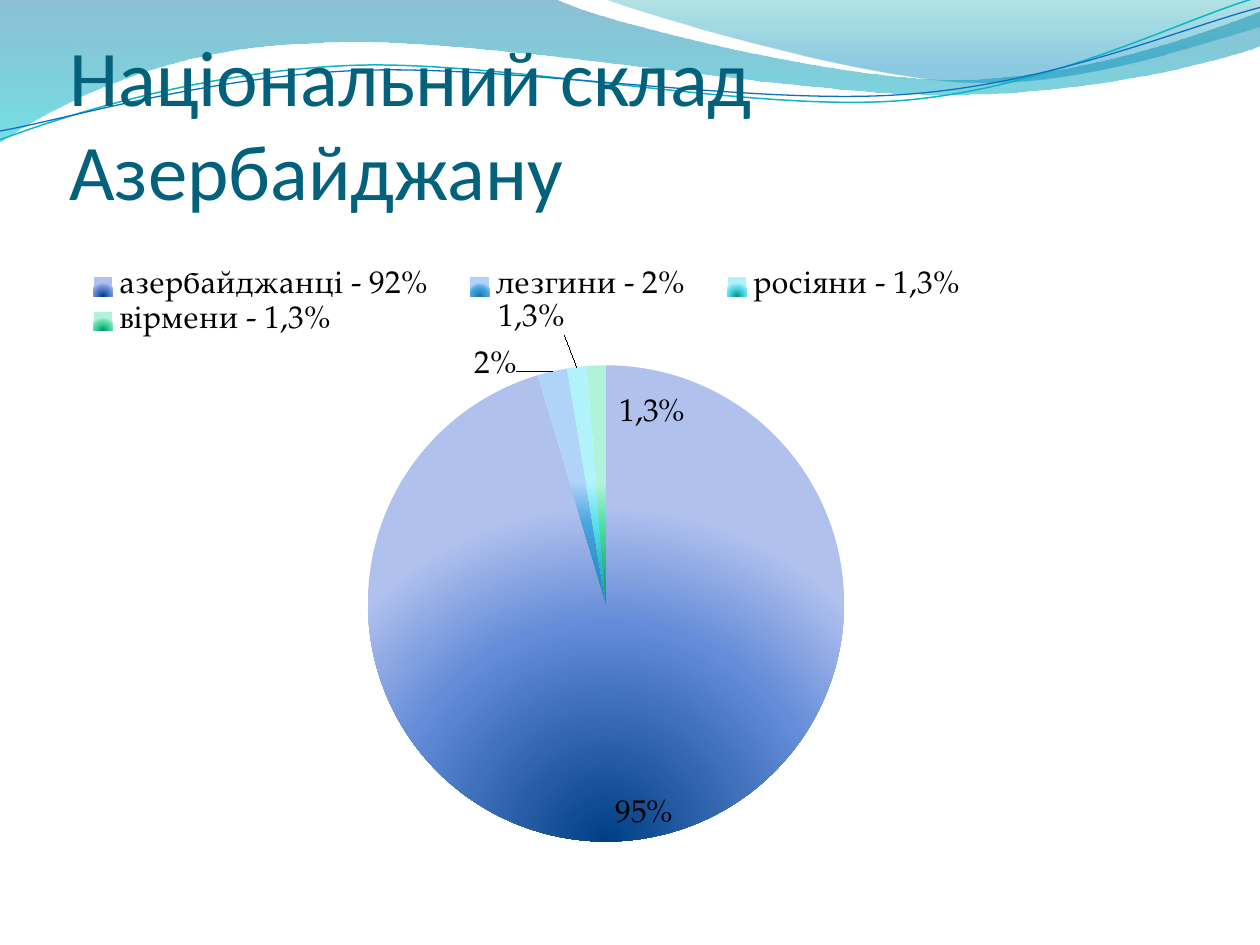
from math import cos, radians, sin

from lxml import etree
from pptx import Presentation
from pptx.chart.data import CategoryChartData
from pptx.dml.color import RGBColor
from pptx.enum.chart import XL_CHART_TYPE, XL_LABEL_POSITION, XL_LEGEND_POSITION
from pptx.enum.text import MSO_ANCHOR, PP_ALIGN
from pptx.oxml import parse_xml
from pptx.oxml.ns import nsdecls, qn
from pptx.util import Inches, Pt

PIE = XL_CHART_TYPE.PIE
INSIDE_END = XL_LABEL_POSITION.INSIDE_END
OUTSIDE_END = XL_LABEL_POSITION.OUTSIDE_END
LEGEND_TOP = XL_LEGEND_POSITION.TOP
BOTTOM = MSO_ANCHOR.BOTTOM
LEFT = PP_ALIGN.LEFT

TITLE = "Національний склад Азербайджану"
CHART_FONT = "TeX Gyre Pagella"
# name, value, gradient from the focus outwards
GROUPS = [
    ("азербайджанці - 92%", 95, ("003F85", "648CD8", "B1C1EE")),
    ("лезгини - 2%", 2, ("1B75AD", "45A5E0", "B0D4F9")),
    ("росіяни - 1,3%", 1.3, ("0A8F96", "55DFE8", "B0F3FA")),
    ("вірмени - 1,3%", 1.3, ("0B8F66", "4FDCA5", "B0F3DA")),
]
# own text, position, shift as a share of the chart; one for each slice
LABELS = [
    (None, INSIDE_END, 0.03, 0),
    (None, OUTSIDE_END, -0.03, 0.03),
    ("1,3%", OUTSIDE_END, -0.01, -0.04),
    ("1,3%", OUTSIDE_END, 0.05, 0.12),
]
# Each outline is a list of points (2 numbers) and cubic curves (6 numbers)
BANDS = [
    ([(0, 0), (4.4, -0.01), (4.76, 0.17, 6.64, 0.63, 7.58, 0.63),
      (8.53, 0.63, 9.58, 0.26, 10, 0.09), (10.01, 0.36),
      (9.83, 0.44, 8.7, 0.76, 7.46, 0.75), (6.22, 0.75, 3.82, 0.28, 2.57, 0.34),
      (1.29, 0.36, 0.46, 0.83, -0.01, 1.13)],
     [(0, "0074A1", 45), (100, "00C6CF", 55)]),
    ([(4.79, -0.01), (5.09, 0.11, 6.82, 0.62, 7.69, 0.65),
      (8.56, 0.69, 9.61, 0.32, 10, 0.21), (10, 0)],
     [(0, "00A1A9", 30), (80, "008BBF", 45)]),
]
# outline, colour, width, centre of rotation
WAVES = [
    ([(0, 1.11), (0.48, 0.93, 1.58, 0.57, 2.77, 0.52),
      (3.95, 0.47, 5.93, 0.89, 7.13, 0.8), (8.33, 0.71, 9.38, 0.15, 9.98, -0.02)],
     "0AB8BF", 0.85, (4.99, 0.57)),
    ([(0, 1.04), (0.47, 0.96, 1.64, 0.61, 2.83, 0.56),
      (4.03, 0.51, 5.97, 0.84, 7.17, 0.75), (8.36, 0.67, 9.41, 0.21, 10, 0.06)],
     "0F6FC6", 0.75, (5, 0.59)),
]
WAVE_TILT = 2.7
LINEAR_DOWN = '<a:lin ang="5400000" scaled="0"/>'
RADIAL_FROM_BOTTOM = ('<a:path path="circle"><a:fillToRect l="50000" t="100000" '
                      'r="50000" b="0"/></a:path>')


def color(hex_code):
    return RGBColor.from_string(hex_code)


def set_gradient(fill, properties, stops, direction):
    """Fill with (position %, colour, opacity %) stops."""
    fill.background()
    stop_xml = "".join(
        f'<a:gs pos="{position * 1000}"><a:srgbClr val="{hex_code}">'
        f'<a:alpha val="{opacity * 1000}"/></a:srgbClr></a:gs>'
        for position, hex_code, opacity in stops)
    gradient = parse_xml(f'<a:gradFill {nsdecls("a")} rotWithShape="1">'
                         f'<a:gsLst>{stop_xml}</a:gsLst>{direction}</a:gradFill>')
    properties.replace(properties.find(qn("a:noFill")), gradient)


def pairs(segment):
    return list(zip(segment[::2], segment[1::2]))


def turn(segment, center, degrees):
    """Rotate every point of a segment about the centre."""
    cosine, sine = cos(radians(degrees)), sin(radians(degrees))
    turned = []
    for x, y in pairs(segment):
        dx, dy = x - center[0], y - center[1]
        turned += [center[0] + dx * cosine - dy * sine,
                   center[1] + dx * sine + dy * cosine]
    return tuple(turned)


def add_outline(slide, segments, close):
    """Draw through the end points, then bend the segments that are curves."""
    anchors = [(Inches(x), Inches(y)) for x, y in (s[-2:] for s in segments)]
    builder = slide.shapes.build_freeform(*anchors[0])
    builder.add_line_segments(anchors[1:], close=close)
    shape = builder.convert_to_shape()
    shape.shadow.inherit = False
    lines = list(shape._element.spPr.iter(qn("a:lnTo")))
    for line, segment in zip(lines, segments[1:]):
        if len(segment) == 6:
            curve = etree.Element(qn("a:cubicBezTo"))
            for x, y in pairs(segment):
                point = etree.SubElement(curve, qn("a:pt"))
                point.set("x", str(Inches(x) - shape.left))
                point.set("y", str(Inches(y) - shape.top))
            line.getparent().replace(line, curve)
    return shape


def make_layout(**values):
    """Manual chart layout, in shares of the chart."""
    layout = etree.Element(qn("c:layout"))
    manual = etree.SubElement(layout, qn("c:manualLayout"))
    for name, value in values.items():
        etree.SubElement(manual, qn(f"c:{name}")).set("val", str(value))
    return layout


def add_decoration(slide):
    for segments, stops in BANDS:
        band = add_outline(slide, segments, True)
        set_gradient(band.fill, band._element.spPr, stops, LINEAR_DOWN)
        band.line.fill.background()
    for segments, hex_code, width, center in WAVES:
        level = [turn(segment, center, WAVE_TILT) for segment in segments]
        wave = add_outline(slide, level, False)
        wave.rotation = -WAVE_TILT
        wave.fill.background()
        wave.line.color.rgb = color(hex_code)
        wave.line.width = Pt(width)


def format_title(title):
    title.left, title.top = Inches(0.55), Inches(0.47)
    title.width, title.height = Inches(9), Inches(1.25)
    frame = title.text_frame
    frame.text = TITLE
    frame.word_wrap = True
    frame.vertical_anchor = BOTTOM
    frame.margin_left = frame.margin_right = frame.margin_bottom = 0
    frame.margin_top = Inches(0.05)
    paragraph = frame.paragraphs[0]
    paragraph.alignment = LEFT
    font = paragraph.runs[0].font
    font.name, font.size = "Calibri", Pt(45)
    font.color.rgb = color("04617B")


def format_font(font):
    font.name, font.size = CHART_FONT, Pt(18)
    font.color.rgb = color("000000")


def format_labels(series):
    labels = series.data_labels
    labels.show_percentage, labels.show_value = True, False
    labels.number_format, labels.number_format_is_linked = "0%", False
    format_font(labels.font)
    for index, (text, position, shift_x, shift_y) in enumerate(LABELS):
        label = series.points[index].data_label
        label.position = position
        if text:
            label.text_frame.text = text
            format_font(label.text_frame.paragraphs[0].runs[0].font)
        element = labels._element.findall(qn("c:dLbl"))[index]
        element.find(qn("c:idx")).addnext(make_layout(x=shift_x, y=shift_y))
        element.find(qn("c:showVal")).set("val", "0")
        element.find(qn("c:showPercent")).set("val", "1")


def add_pie(slide):
    data = CategoryChartData()
    data.categories = [name for name, _, _ in GROUPS]
    data.add_series("Series 1", [value for _, value, _ in GROUPS])
    chart = slide.shapes.add_chart(
        PIE, Inches(0.31), Inches(2.03), Inches(9), Inches(4.8), data).chart
    format_font(chart.font)
    chart.has_title = False
    chart.has_legend = True
    chart.legend.position = LEGEND_TOP
    chart.legend.include_in_layout = False
    chart.legend._element.find(qn("c:legendPos")).addnext(
        make_layout(xMode="edge", yMode="edge", x=0.02, y=0.02, w=0.82, h=0.12))

    plot_area = chart._chartSpace.chart.plotArea
    for layout in plot_area.findall(qn("c:layout")):
        plot_area.remove(layout)
    plot_area.insert(0, make_layout(layoutTarget="inner", xMode="edge", yMode="edge",
                                    x=0.29, y=0.18, w=0.42, h=0.79))

    plot = chart.plots[0]
    plot.vary_by_categories = True
    series = plot.series[0]
    for index, (_, _, shades) in enumerate(GROUPS):
        point_format = series.points[index].format
        fill = point_format.fill
        fill.background()
        stops = [(position, shade, 100) for position, shade in zip((0, 65, 100), shades)]
        set_gradient(fill, point_format._element.find(qn("c:spPr")), stops,
                     RADIAL_FROM_BOTTOM)
    format_labels(series)


def main():
    presentation = Presentation()
    presentation.slide_width, presentation.slide_height = Inches(10), Inches(7.5)
    slide = presentation.slides.add_slide(presentation.slide_layouts[5])
    add_decoration(slide)
    title = slide.shapes.title
    format_title(title)
    slide.shapes._spTree.append(title._element)  # in front of the decoration
    add_pie(slide)
    presentation.save("out.pptx")


if __name__ == "__main__":
    main()
